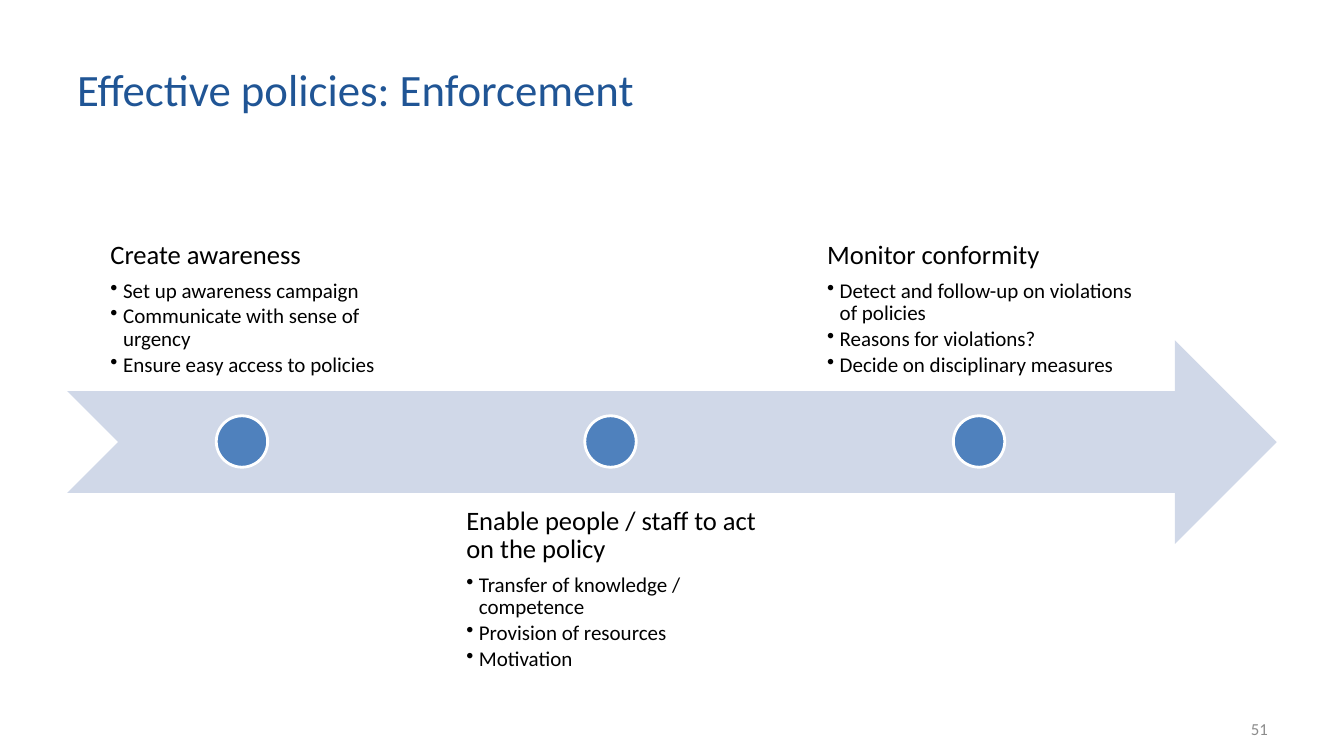
from pptx import Presentation
from pptx.dml.color import RGBColor
from pptx.enum.shapes import MSO_SHAPE
from pptx.enum.text import MSO_ANCHOR, PP_ALIGN
from pptx.oxml.ns import qn
from pptx.util import Emu, Pt
from lxml import etree

ARROW = MSO_SHAPE.NOTCHED_RIGHT_ARROW
CIRCLE = MSO_SHAPE.OVAL
TOP, MIDDLE, BOTTOM = MSO_ANCHOR.TOP, MSO_ANCHOR.MIDDLE, MSO_ANCHOR.BOTTOM
LEFT, RIGHT = PP_ALIGN.LEFT, PP_ALIGN.RIGHT

MARGIN, STEP_WIDTH, STEP_HEIGHT, STEP_PITCH = 64, 334, 194, 351
ARROW_TOP, ARROW_WIDTH = 324, 1152
DOT_SIZE = 49
UPPER_TOP, LOWER_TOP = 179, 469

STEPS = [
    ("Create awareness",
     ["Set up awareness campaign", "Communicate with sense of urgency",
      "Ensure easy access to policies"]),
    ("Enable people / staff to act on the policy",
     ["Transfer of knowledge / competence", "Provision of resources", "Motivation"]),
    ("Monitor conformity",
     ["Detect and follow-up on violations of policies", "Reasons for violations?",
      "Decide on disciplinary measures"]),
]


def px(length):
    return Emu(length * 9525)


def color(value):
    return RGBColor.from_string(value)


class SlideBuilder:
    font_name = "Calibri"

    def __init__(self, slide):
        self.slide = slide

    def shape(self, kind, left, top, width, height, fill, line=None):
        shape = self.slide.shapes.add_shape(kind, px(left), px(top), px(width), px(height))
        shape.shadow.inherit = False
        shape.fill.solid()
        shape.fill.fore_color.rgb = color(fill)
        if line:
            shape.line.color.rgb = color(line)
            shape.line.width = Pt(2)
        else:
            shape.line.fill.background()

    def text_frame(self, left, top, width, height, anchor):
        box = self.slide.shapes.add_textbox(px(left), px(top), px(width), px(height))
        frame = box.text_frame
        frame.word_wrap = True
        frame.vertical_anchor = anchor
        return frame

    def run(self, paragraph, text, size, text_color):
        run = paragraph.add_run()
        run.text = text
        run.font.name = self.font_name
        run.font.size = Pt(size)
        run.font.color.rgb = color(text_color)

    def label(self, text, left, top, width, height, size, text_color, align=LEFT):
        paragraph = self.text_frame(left, top, width, height, MIDDLE).paragraphs[0]
        paragraph.alignment = align
        self.run(paragraph, text, size, text_color)

    def bullet(self, paragraph):
        properties = paragraph._p.get_or_add_pPr()
        properties.set("marL", str(px(12)))
        properties.set("indent", str(px(-12)))
        etree.SubElement(properties, qn("a:buChar")).set("char", "•")

    def step(self, heading, points, left, top, anchor):
        """Add a heading with bullets, centred as a block but left-aligned."""
        frame = self.text_frame(left, top, STEP_WIDTH, STEP_HEIGHT, anchor)
        frame._txBody.bodyPr.set("anchorCtr", "1")
        frame.margin_left = frame.margin_right = px(14)
        frame.margin_top = frame.margin_bottom = px(14)
        paragraph = frame.paragraphs[0]
        paragraph.line_spacing = 0.9
        paragraph.space_after = Pt(6.65)
        self.run(paragraph, heading, 19, "000000")
        for point in points:
            paragraph = frame.add_paragraph()
            self.bullet(paragraph)
            paragraph.line_spacing = 0.9
            paragraph.space_after = Pt(2.25)
            self.run(paragraph, point, 15, "000000")


def main():
    presentation = Presentation()
    presentation.slide_width, presentation.slide_height = px(1280), px(720)
    builder = SlideBuilder(presentation.slides.add_slide(presentation.slide_layouts[6]))

    builder.label("Effective policies: Enforcement", MARGIN, 29, 951, 110, 32, "205595")
    builder.shape(ARROW, MARGIN, ARROW_TOP, ARROW_WIDTH, STEP_HEIGHT, "D0D8E8")

    dot_top = ARROW_TOP + (STEP_HEIGHT - DOT_SIZE) // 2
    for index, (heading, points) in enumerate(STEPS):
        left = MARGIN + index * STEP_PITCH
        top, anchor = (LOWER_TOP, TOP) if index % 2 else (UPPER_TOP, BOTTOM)
        builder.step(heading, points, left, top, anchor)
        dot_left = left + (STEP_WIDTH - DOT_SIZE) // 2
        builder.shape(CIRCLE, dot_left, dot_top, DOT_SIZE, DOT_SIZE, "4F81BD", "FFFFFF")

    builder.label("51", 918, 675, 299, 38, 12, "8C8C8C", RIGHT)
    presentation.save("out.pptx")


if __name__ == "__main__":
    main()
